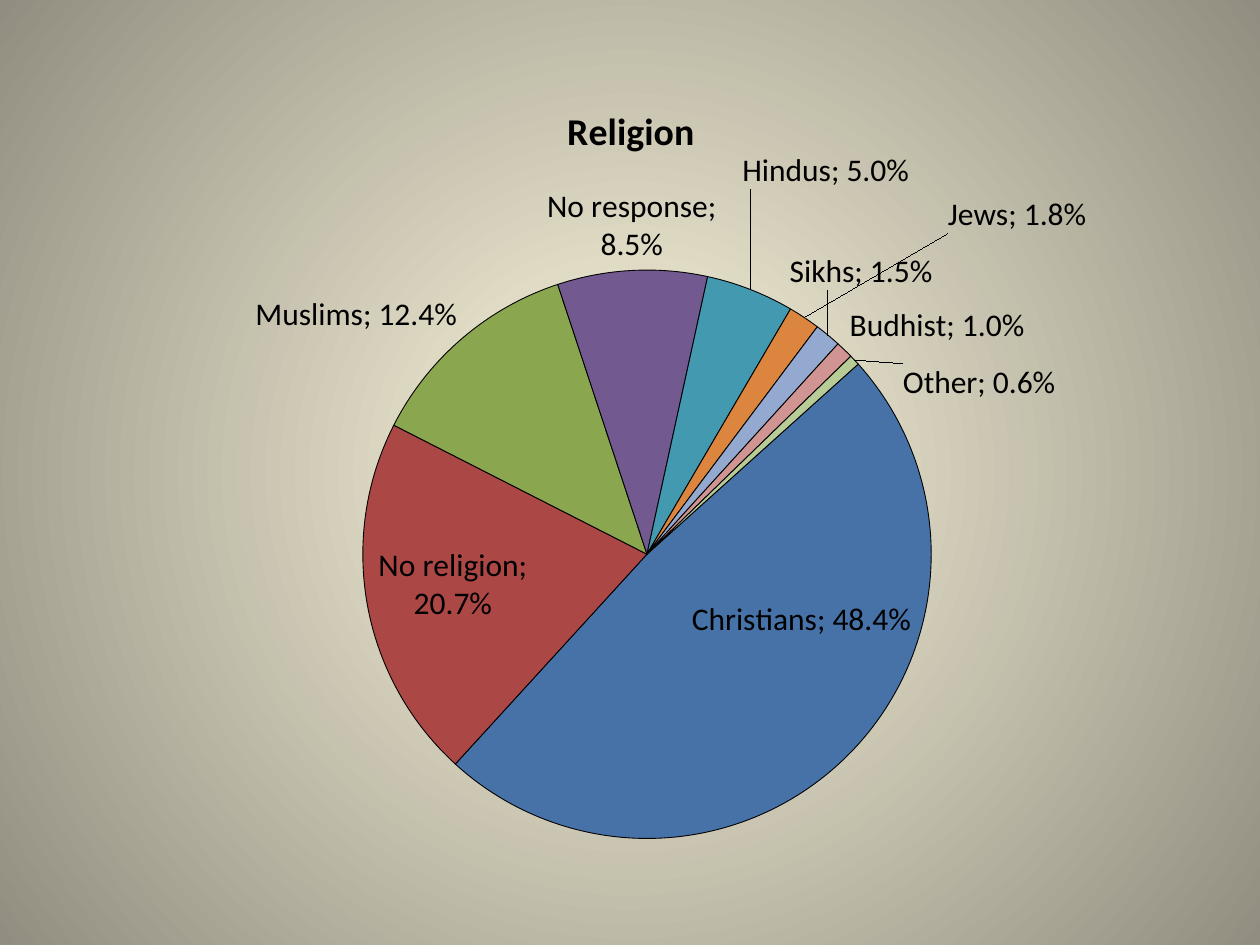
from dataclasses import dataclass

from lxml import etree
from pptx import Presentation
from pptx.chart.data import CategoryChartData
from pptx.dml.color import RGBColor
from pptx.enum.chart import XL_CHART_TYPE, XL_LABEL_POSITION
from pptx.oxml.ns import qn
from pptx.util import Cm, Pt

PIE = XL_CHART_TYPE.PIE
BEST_FIT = XL_LABEL_POSITION.BEST_FIT


@dataclass(frozen=True)
class Theme:
    font: str = "Calibri"
    text: str = "000000"
    glow: str = "FCF7DD"
    edge: str = "918E81"
    label: float = 18
    title: float = 21.6
    line: float = 0.5


THEME = Theme()

# name, share, colour, label shift as a part of the chart's width and height
SHARES = [
    ("Christians", 0.484, "4672A8", None),
    ("No religion", 0.207, "AB4744", None),
    ("Muslims", 0.124, "8AA64F", None),
    ("No response", 0.085, "725990", None),
    ("Hindus", 0.05, "4299B0", (-0.01, -0.12)),
    ("Jews", 0.018, "DC853E", (0.13, -0.1)),
    ("Sikhs", 0.015, "93A9D0", (-0.04, -0.05)),
    ("Budhist", 0.01, "D09493", None),
    ("Other", 0.006, "B8CC97", (0.04, 0.06)),
]


def rgb(code):
    return RGBColor.from_string(code)


def style(font, size, bold=False):
    font.name = THEME.font
    font.size = Pt(size)
    font.bold = bold
    font.color.rgb = rgb(THEME.text)


def layout(**parts):
    """Return a manual chart layout made of the given parts."""
    root = etree.Element(qn("c:layout"))
    manual = etree.SubElement(root, qn("c:manualLayout"))
    for name, value in parts.items():
        etree.SubElement(manual, qn(f"c:{name}")).set("val", str(value))
    return root


def split(labels):
    """Set the mark between category and value."""
    mark = etree.Element(qn("c:separator"))
    mark.text = "; "
    labels.find(qn("c:showBubbleSize")).addnext(mark)


def paint_back(slide):
    fill = slide.background.fill
    fill.gradient()
    for stop, code, place in zip(fill.gradient_stops, (THEME.glow, THEME.edge), (0, 1)):
        stop.color.rgb = rgb(code)
        stop.position = place
    grad = slide.element.find(".//" + qn("a:gradFill"))
    line = grad.find(qn("a:lin"))
    round_path = etree.Element(qn("a:path"))
    round_path.set("path", "circle")
    centre = etree.SubElement(round_path, qn("a:fillToRect"))
    for side in "ltrb":
        centre.set(side, "50000")
    grad.replace(line, round_path)


def label_pie(series):
    labels = series.data_labels
    labels.show_value = True
    labels.show_category_name = True
    labels.show_percentage = False
    labels.number_format = "0.0%"
    labels.number_format_is_linked = False
    labels.position = BEST_FIT
    style(labels.font, THEME.label)
    for i, (_, _, _, shift) in enumerate(SHARES):
        if shift:
            label = series.points[i].data_label
            label.position = BEST_FIT
            style(label.font, THEME.label)
    root = series._element.find(qn("c:dLbls"))
    for item in root.findall(qn("c:dLbl")):
        index = item.find(qn("c:idx"))
        x, y = SHARES[int(index.get("val"))][3]
        index.addnext(layout(x=x, y=y))
        item.find(qn("c:showCatName")).set("val", "1")
        split(item)
    split(root)


def add_pie(slide, left, top, width, height):
    data = CategoryChartData(number_format="0.0%")
    data.categories = [share[0] for share in SHARES]
    data.add_series("Religion", [share[1] for share in SHARES])
    chart = slide.shapes.add_chart(PIE, left, top, width, height, data).chart
    style(chart.font, THEME.label)
    chart.has_legend = False
    chart.has_title = True
    frame = chart.chart_title.text_frame
    frame.text = "Religion"
    style(frame.paragraphs[0].runs[0].font, THEME.title, True)

    plot = chart.plots[0]
    plot.vary_by_categories = True
    series = plot.series[0]
    for i, (_, _, code, _) in enumerate(SHARES):
        form = series.points[i].format
        form.fill.solid()
        form.fill.fore_color.rgb = rgb(code)
        form.line.color.rgb = rgb(THEME.text)
        form.line.width = Pt(THEME.line)
    label_pie(series)

    area = chart._chartSpace.find(".//" + qn("c:plotArea"))
    for old in area.findall(qn("c:layout")):
        area.remove(old)
    area.insert(0, layout(layoutTarget="inner", xMode="edge", yMode="edge",
                          x=0.25, y=0.25, w=0.53, h=0.73))
    pie = area.find(qn("c:pieChart"))
    turn = pie.find(qn("c:firstSliceAng"))
    if turn is None:
        turn = etree.SubElement(pie, qn("c:firstSliceAng"))
    turn.set("val", "48")


def main():
    deck = Presentation()
    deck.slide_width, deck.slide_height = Cm(25.4), Cm(19.05)
    slide = deck.slides.add_slide(deck.slide_layouts[6])
    paint_back(slide)
    add_pie(slide, Cm(1.9), Cm(1.52), Cm(21.64), Cm(15.7))
    deck.save("out.pptx")


if __name__ == "__main__":
    main()
